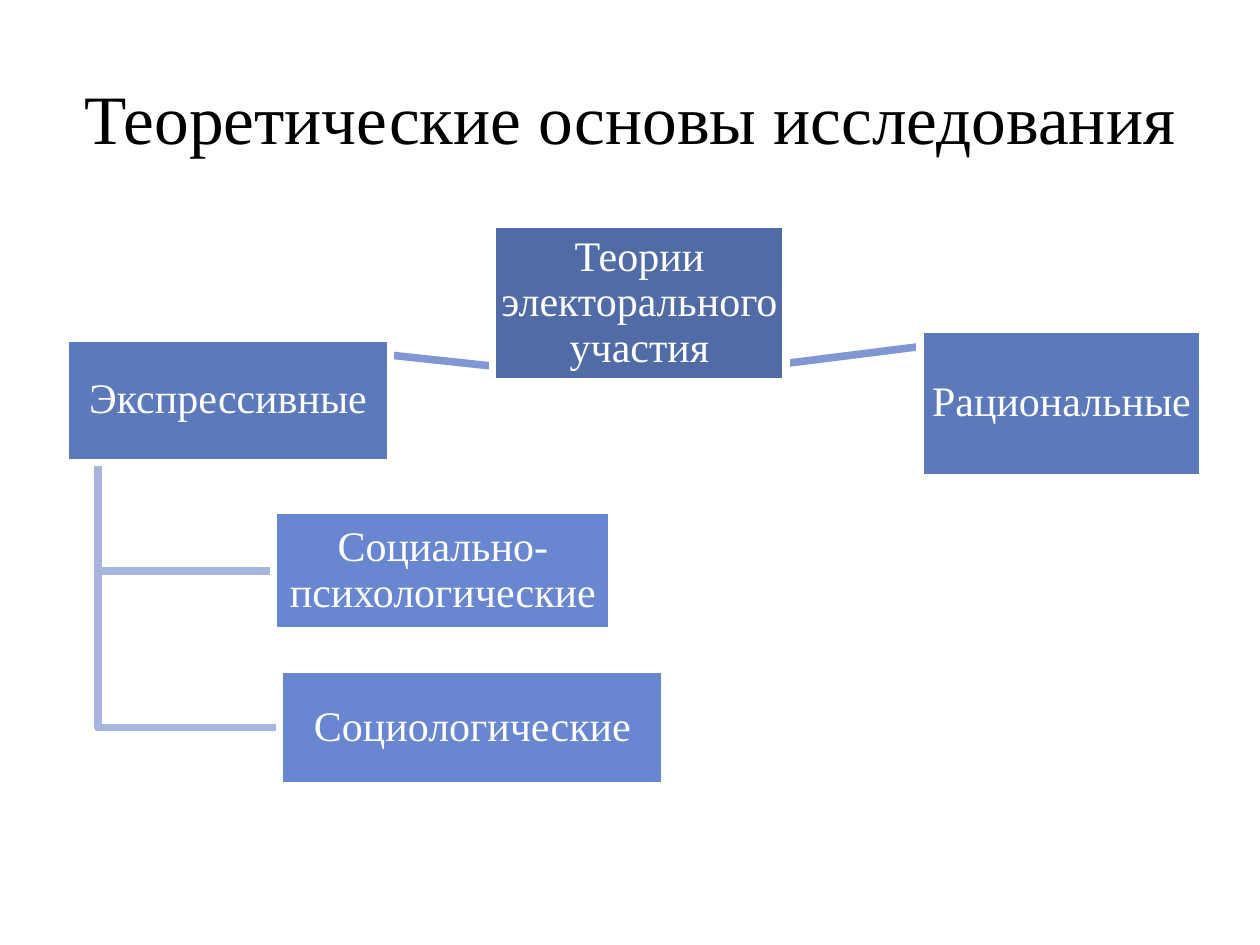
"""Build a slide with a hierarchy of theories of electoral participation."""
import pptx
import pptx.dml.color
import pptx.enum.shapes
import pptx.enum.text
import pptx.oxml
import pptx.oxml.ns
import pptx.util

Pt = pptx.util.Pt
FONT = "Times New Roman"
LINE_WIDTH = Pt(4.33)


def color(hex_value):
    return pptx.dml.color.RGBColor.from_string(hex_value)


prs = pptx.Presentation()
prs.slide_width, prs.slide_height = Pt(720), Pt(540)
s = prs.slides.add_slide(prs.slide_layouts[5])

title = s.shapes.title
title.left, title.top, title.width, title.height = Pt(36), Pt(21.6), Pt(648), Pt(90)
tf = title.text_frame
tf.text = "Теоретические основы исследования"
tf.auto_size = pptx.enum.text.MSO_AUTO_SIZE.NONE
tf.vertical_anchor = pptx.enum.text.MSO_ANCHOR.MIDDLE
p = tf.paragraphs[0]
p.alignment = pptx.enum.text.PP_ALIGN.CENTER
p.font.name, p.font.size = FONT, Pt(39.6)
p.font.color.rgb = color("000000")

boxes = {
    "root": ("Теории электорального участия", 281.5, 128.2, 167.8, 90, "516BA6"),
    "expressive": ("Экспрессивные", 37.4, 193, 185.8, 71.3, "5C79BC"),
    "psychological": ("Социально-психологические", 156.2, 291.6, 193.7, 69.1, "6887D0"),
    "sociological": ("Социологические", 159.8, 382.3, 220.3, 67, "6887D0"),
    "rational": ("Рациональные", 525.6, 187.9, 162, 85, "5C79BC"),
}

text, left, top, width, height, fill = boxes["root"]
root_x, root_y = left + width / 2, top + height
for name in ("rational", "expressive"):
    text, left, top, width, height, fill = boxes[name]
    sp = s.shapes.add_connector(
        pptx.enum.shapes.MSO_CONNECTOR.STRAIGHT,
        Pt(root_x), Pt(root_y), Pt(left + width / 2), Pt(top))
    sp.line.color.rgb = color("8197D4")
    sp.line.width = LINE_WIDTH
    sp._element.spPr.append(pptx.oxml.parse_xml(
        "<a:effectLst %s/>" % pptx.oxml.ns.nsdecls("a")))

text, left, top, width, height, fill = boxes["expressive"]
trunk_x, trunk_y = left + width / 10, top + height
for name in ("sociological", "psychological"):
    text, left, top, width, height, fill = boxes[name]
    middle = top + height / 2
    builder = s.shapes.build_freeform(Pt(trunk_x), Pt(trunk_y))
    builder.add_line_segments(
        [(Pt(trunk_x), Pt(middle)), (Pt(left), Pt(middle))], close=False)
    sp = builder.convert_to_shape()
    sp.shadow.inherit = False
    sp.fill.background()
    sp.line.color.rgb = color("A8B5DF")
    sp.line.width = LINE_WIDTH

for text, left, top, width, height, fill in boxes.values():
    sp = s.shapes.add_shape(
        pptx.enum.shapes.MSO_SHAPE.RECTANGLE, Pt(left), Pt(top), Pt(width), Pt(height))
    sp.shadow.inherit = False
    sp.fill.solid()
    sp.fill.fore_color.rgb = color(fill)
    sp.line.color.rgb = color("FFFFFF")
    sp.line.width = LINE_WIDTH
    tf = sp.text_frame
    tf.text = text
    tf.word_wrap = True
    tf.vertical_anchor = pptx.enum.text.MSO_ANCHOR.MIDDLE
    tf.margin_left = tf.margin_right = tf.margin_top = tf.margin_bottom = Pt(1.2)
    p = tf.paragraphs[0]
    p.alignment = pptx.enum.text.PP_ALIGN.CENTER
    p.line_spacing = 0.9
    p.font.name, p.font.size = FONT, Pt(24)
    p.font.color.rgb = color("FFFFFF")

prs.save("out.pptx")
